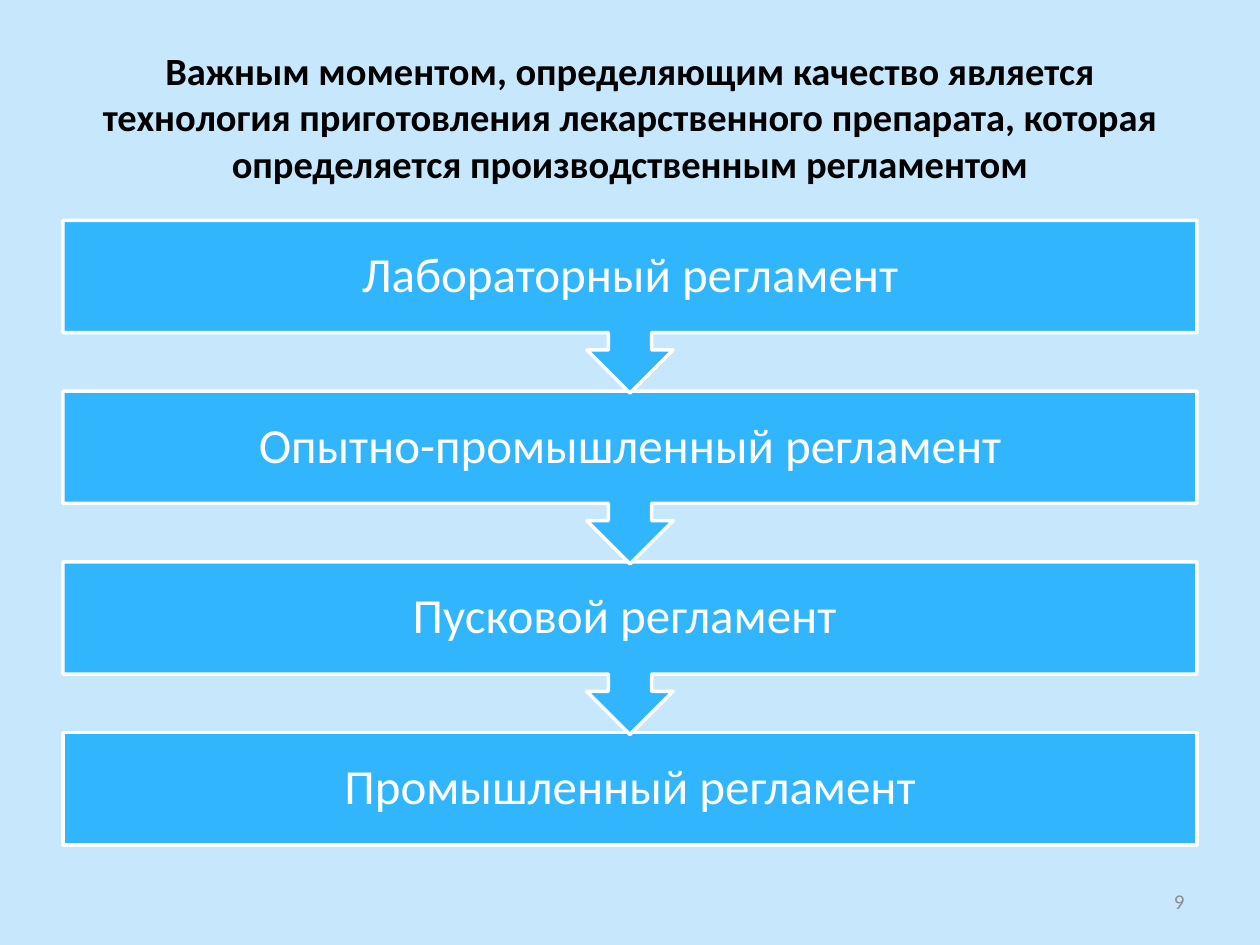
"""Build a slide showing four production regulations as a downward flow."""
import pptx
import pptx.util
import pptx.dml.color
import pptx.enum.shapes
import pptx.enum.text

Inches = pptx.util.Inches
Pt = pptx.util.Pt
RGBColor = pptx.dml.color.RGBColor
Shape = pptx.enum.shapes.MSO_SHAPE
Align = pptx.enum.text.PP_ALIGN
Anchor = pptx.enum.text.MSO_ANCHOR

TITLE = (
    "Важным моментом, определяющим качество является "
    "технология приготовления лекарственного препарата, "
    "которая определяется производственным регламентом"
)
STEPS = [
    "Лабораторный регламент",
    "Опытно-промышленный регламент",
    "Пусковой регламент ",
    "Промышленный регламент",
]
NUMBER = "9"

SKY = RGBColor(0xC6, 0xE7, 0xFC)
BLUE = RGBColor(0x31, 0xB6, 0xFD)
WHITE = RGBColor(0xFF, 0xFF, 0xFF)
BLACK = RGBColor(0, 0, 0)
GRAY = RGBColor(0x8C, 0x8C, 0x8C)

LEFT, WIDTH = 0.5, 9
TOP, PITCH = 1.75, 1.355
BOX, CALL = 0.89, 1.37


def write(shape, text, size, color, bold=False, align=Align.CENTER,
          inset=(0.1, 0.05), line=1.0):
    frame = shape.text_frame
    frame.word_wrap = True
    frame.vertical_anchor = Anchor.MIDDLE
    frame.margin_left = frame.margin_right = Inches(inset[0])
    frame.margin_top = frame.margin_bottom = Inches(inset[1])
    para = frame.paragraphs[0]
    para.alignment = align
    para.line_spacing = line
    run = para.add_run()
    run.text = text
    run.font.name = "Calibri"
    run.font.size = Pt(size)
    run.font.bold = bold
    run.font.color.rgb = color


def add_text(slide, place, text, **style):
    write(slide.shapes.add_textbox(*map(Inches, place)), text, **style)


def add_step(slide, index, text):
    last = index == len(STEPS) - 1
    kind = Shape.RECTANGLE if last else Shape.DOWN_ARROW_CALLOUT
    place = (LEFT, TOP + index * PITCH, WIDTH, BOX if last else CALL)
    shape = slide.shapes.add_shape(kind, *map(Inches, place))
    shape.shadow.inherit = False
    shape.fill.solid()
    shape.fill.fore_color.rgb = BLUE
    shape.line.color.rgb = WHITE
    shape.line.width = Pt(2)
    write(shape, text, size=28, color=WHITE, inset=(0.22, 0.22), line=0.9)


def main():
    deck = pptx.Presentation()
    deck.slide_width, deck.slide_height = Inches(10), Inches(7.5)
    slide = deck.slides.add_slide(deck.slide_layouts[6])
    slide.background.fill.solid()
    slide.background.fill.fore_color.rgb = SKY

    add_text(slide, (LEFT, 0.3, WIDTH, 1.25), TITLE,
             size=22, color=BLACK, bold=True)
    for index, text in reversed(list(enumerate(STEPS))):
        add_step(slide, index, text)
    add_text(slide, (7.17, 6.95, 2.33, 0.4), NUMBER,
             size=12, color=GRAY, align=Align.RIGHT)
    deck.save("out.pptx")


if __name__ == "__main__":
    main()
